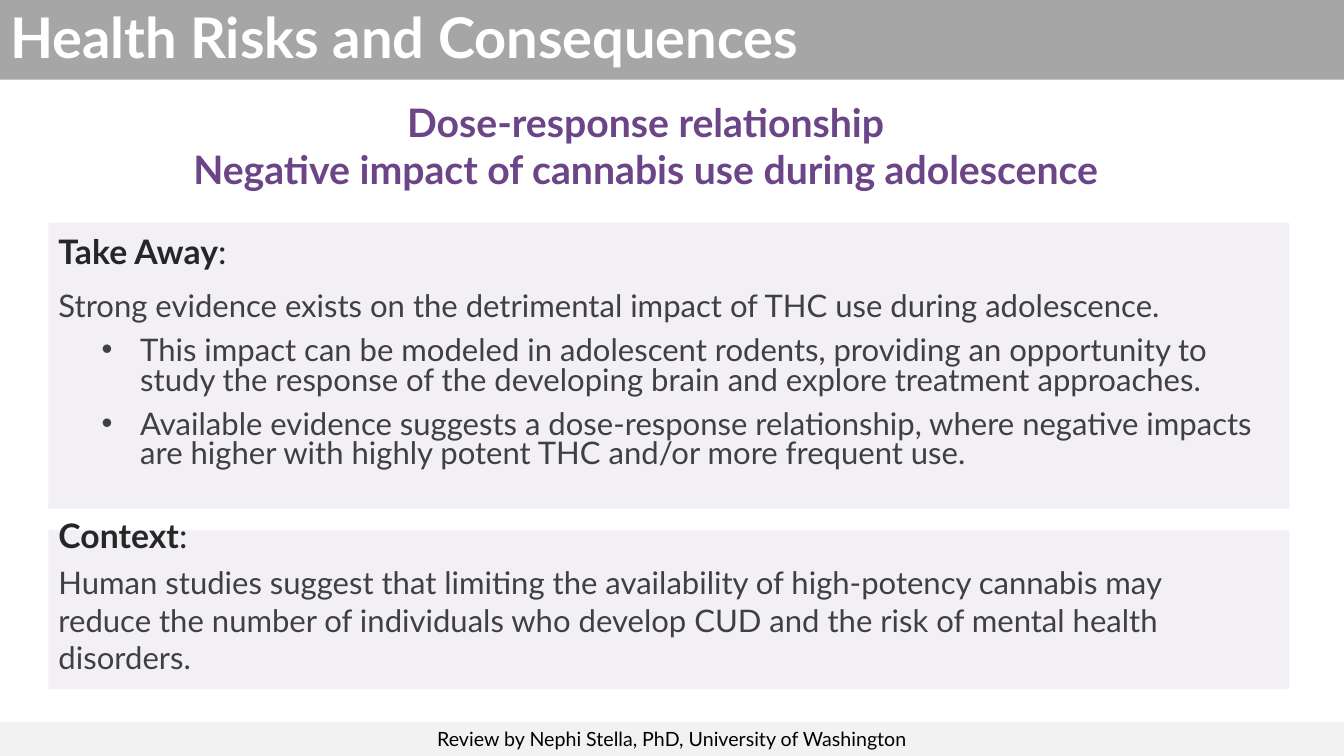
from lxml.etree import SubElement
from pptx import Presentation
from pptx.dml.color import RGBColor
from pptx.enum.shapes import MSO_SHAPE
from pptx.enum.text import MSO_ANCHOR, MSO_AUTO_SIZE, PP_ALIGN
from pptx.oxml.ns import qn
from pptx.util import Cm, Pt

WIDTH, HEIGHT = 33.87, 19.05
PANEL_LEFT, PANEL_WIDTH = 1.22, 31.27
TAKE_AWAY_BOX = (PANEL_LEFT, 5.61, PANEL_WIDTH, 7.21)
CONTEXT_BOX = (PANEL_LEFT, 13.36, PANEL_WIDTH, 4.01)

HEADING = {"size": Pt(24.1), "bold": True, "color": "262626"}
COLON = {**HEADING, "bold": False}
STATEMENT = {"size": Pt(22.2), "bold": False, "color": "404040"}
TIGHT = {"line_spacing": 0.8, "space_before": Pt(10), "space_after": Pt(0)}
LOOSE = {"line_spacing": 1.0, "space_before": Pt(0), "space_after": Pt(0)}


def rgb(hex_color):
    return RGBColor.from_string(hex_color)


def place(shape, box):
    for name, length in zip(("left", "top", "width", "height"), box):
        setattr(shape, name, Cm(length))


def fill_with(shape, color):
    shape.fill.solid()
    shape.fill.fore_color.rgb = rgb(color)


def add_run(paragraph, text, style):
    run = paragraph.add_run()
    run.text = text
    run.font.name = "Lato"
    for name, value in style.items():
        if name == "color":
            run.font.color.rgb = rgb(value)
        else:
            setattr(run.font, name, value)


def set_bullet(paragraph, bulleted):
    properties = paragraph._p.get_or_add_pPr()
    properties.set("marL", str(Cm(2.06) if bulleted else 0))
    properties.set("indent", str(Cm(-0.97) if bulleted else 0))
    if bulleted:
        SubElement(properties, qn("a:buFont")).set("typeface", "Arial")
        SubElement(properties, qn("a:buChar")).set("char", "•")
    else:
        SubElement(properties, qn("a:buNone"))


def add_paragraphs(frame, entries):
    """Each entry is (runs, paragraph format, bulleted)."""
    for index, (runs, layout, bulleted) in enumerate(entries):
        paragraph = frame.add_paragraph() if index else frame.paragraphs[0]
        set_bullet(paragraph, bulleted)
        for name, value in layout.items():
            setattr(paragraph, name, value)
        for text, style in runs:
            add_run(paragraph, text, style)


def prepare_frame(shape, anchor):
    frame = shape.text_frame
    settings = {"word_wrap": True, "auto_size": MSO_AUTO_SIZE.NONE,
                "vertical_anchor": anchor}
    for name, value in settings.items():
        setattr(frame, name, value)
    return frame


def add_panel(slide, box, color):
    panel = slide.shapes.add_shape(MSO_SHAPE.RECTANGLE, *map(Cm, box))
    panel.shadow.inherit = False
    panel.line.fill.background()
    fill_with(panel, color)
    return panel


def title_bar(slide, box):
    title = slide.shapes.title
    place(title, box)
    fill_with(title, "A6A6A6")
    style = {"size": Pt(40), "bold": True, "color": "FFFFFF"}
    layout = {"line_spacing": 0.9, "alignment": PP_ALIGN.LEFT}
    add_paragraphs(prepare_frame(title, MSO_ANCHOR.MIDDLE),
                   [([("Health Risks and Consequences", style)], layout, False)])


def subtitle(slide, box):
    heading = slide.shapes.add_textbox(*map(Cm, box))
    style = {"size": Pt(28), "bold": True, "color": "6B4587"}
    lines = ("Dose-response relationship",
             "Negative impact of cannabis use during adolescence")
    add_paragraphs(prepare_frame(heading, MSO_ANCHOR.TOP),
                   [([(line, style)], {"alignment": PP_ALIGN.CENTER}, False)
                    for line in lines])


def findings(slide, box):
    """Fill the body, which runs over both panels."""
    body = slide.placeholders[1]
    place(body, box)
    for panel_box in (CONTEXT_BOX, TAKE_AWAY_BOX):
        panel = add_panel(slide, panel_box, "F2EFF5")
        body._element.addprevious(panel._element)

    def heading(text):
        return [(text, HEADING), (":", COLON)]

    def statement(text):
        return [(text, STATEMENT)]

    add_paragraphs(prepare_frame(body, MSO_ANCHOR.TOP), [
        (heading("Take Away"),
         {**TIGHT, "space_before": Pt(0), "space_after": Pt(6)}, False),
        (statement("Strong evidence exists on the detrimental impact of THC "
                   "use during adolescence."), TIGHT, False),
        (statement("This impact can be modeled in adolescent rodents, "
                   "providing an opportunity to study the response of the "
                   "developing brain and explore treatment approaches."),
         TIGHT, True),
        (statement("Available evidence suggests a dose-response relationship, "
                   "where negative impacts are higher with highly potent THC "
                   "and/or more frequent use."), TIGHT, True),
        (heading("Context"),
         {**LOOSE, "space_before": Pt(31.5), "space_after": Pt(6)}, False),
        (statement("Human studies suggest that limiting the availability of "
                   "high-potency cannabis may reduce the number of individuals "
                   "who develop CUD and the risk of mental health disorders."),
         LOOSE, False),
    ])


def credit_bar(slide, box):
    bar = add_panel(slide, box, "F2F2F2")
    style = {"size": Pt(14), "color": "000000"}
    add_paragraphs(prepare_frame(bar, MSO_ANCHOR.MIDDLE),
                   [([("Review by Nephi Stella, PhD, University of Washington",
                       style)], {"alignment": PP_ALIGN.CENTER}, False)])


def main():
    deck = Presentation()
    deck.slide_width, deck.slide_height = Cm(WIDTH), Cm(HEIGHT)
    slide = deck.slides.add_slide(deck.slide_layouts[1])
    title_bar(slide, (0, 0, WIDTH, 2.01))
    subtitle(slide, (0.66, 2.36, 31.22, 2.64))
    findings(slide, (PANEL_LEFT, 5.89, 30.63, 11.2))
    credit_bar(slide, (0, HEIGHT - 0.86, WIDTH, 0.86))
    deck.save("out.pptx")


if __name__ == "__main__":
    main()
